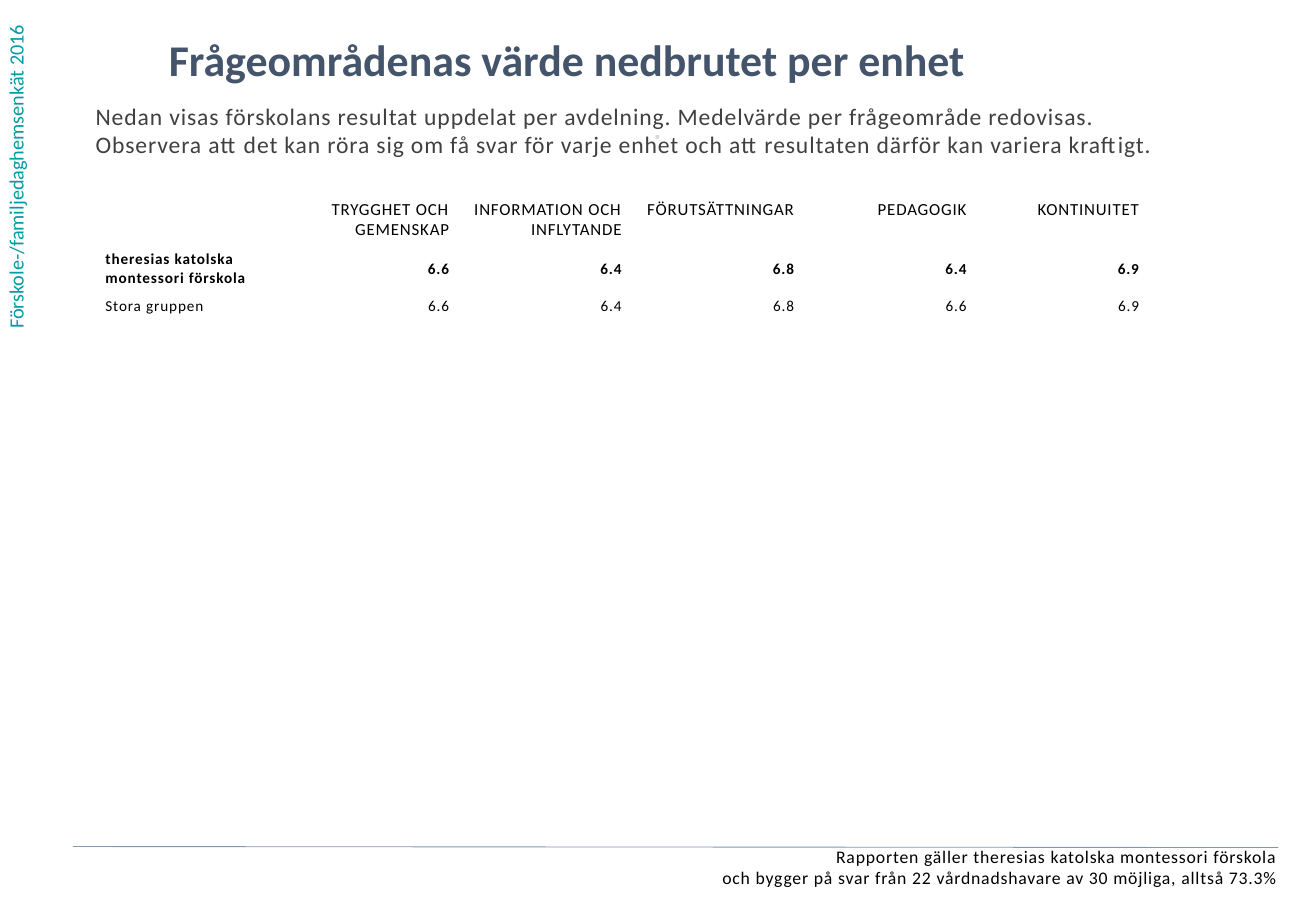
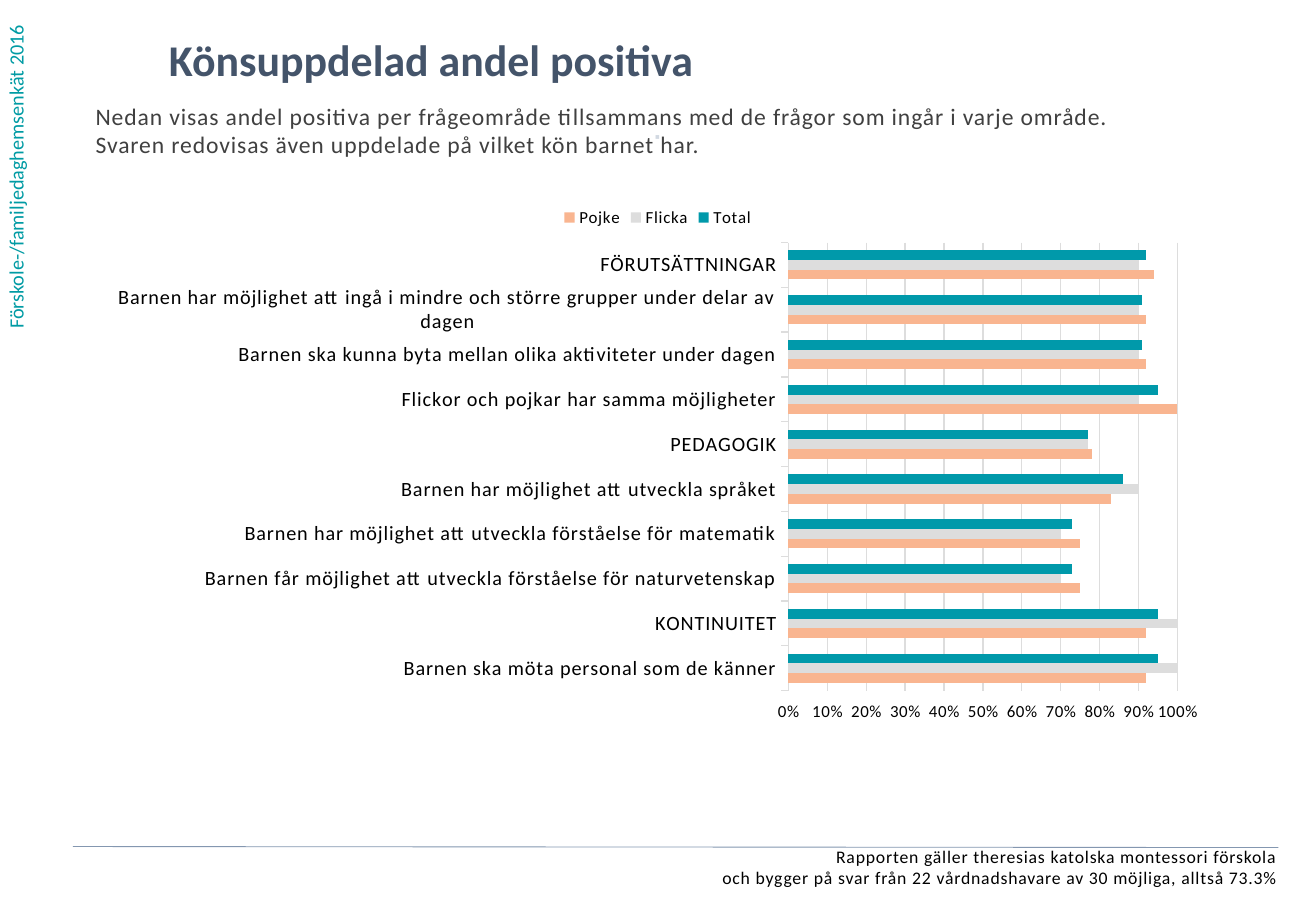
import dataclasses

import pptx
import pptx.chart.data
import pptx.dml.color
import pptx.enum.chart
import pptx.enum.shapes
import pptx.enum.text
import pptx.oxml.ns
import pptx.util

Pt = pptx.util.Pt
RGB = pptx.dml.color.RGBColor.from_string
qn = pptx.oxml.ns.qn
Align = pptx.enum.text.PP_ALIGN
Anchor = pptx.enum.text.MSO_ANCHOR


@dataclasses.dataclass(frozen=True)
class Theme:
    font: str = "Calibri"
    title: str = "44546A"
    body: str = "404040"
    ink: str = "000000"
    teal: str = "009BA4"
    dot: str = "D2D9E2"
    rule: str = "8497B0"
    grid: str = "DDDDDD"
    white: str = "FFFFFF"
    head: float = 26
    lead: float = 14
    label: float = 12
    foot: float = 10.5
    small: float = 10
    cell: float = 9
    track: str = "50"


T = Theme()
WIDE, TALL = 779.76, 540
LEFT, TOP = 56.7, 115.2

SIDE = "Förskole-/familjedaghemsenkät 2016"
FOOT = ("Rapporten gäller theresias katolska montessori förskola\n"
        "och bygger på svar från 22 vårdnadshavare av 30 möjliga, alltså 73.3%")

UNITS = {
    "title": "Frågeområdenas värde nedbrutet per enhet",
    "lead": "Nedan visas förskolans resultat uppdelat per avdelning. "
            "Medelvärde per frågeområde redovisas.\n"
            "Observera att det kan röra sig om få svar för varje enhet "
            "och att resultaten därför kan variera kraftigt.",
    "rows": [
        ("", "TRYGGHET OCH GEMENSKAP", "INFORMATION OCH INFLYTANDE",
         "FÖRUTSÄTTNINGAR", "PEDAGOGIK", "KONTINUITET", ""),
        ("theresias katolska montessori förskola",
         "6.6", "6.4", "6.8", "6.4", "6.9", ""),
        ("Stora gruppen", "6.6", "6.4", "6.8", "6.6", "6.9", ""),
    ],
    "heights": (30.2, 28, 17),
}

GENDER = {
    "title": "Könsuppdelad andel positiva",
    "lead": "Nedan visas andel positiva per frågeområde tillsammans med de "
            "frågor som ingår i varje område.\n"
            "Svaren redovisas även uppdelade på vilket kön barnet har.",
    "names": ("Total", "Flicka", "Pojke"),
    "fills": ("0099AA", "DDDDDD", "F9B590"),
    "rows": [
        ("FÖRUTSÄTTNINGAR", 0.92, 0.9, 0.94),
        ("Barnen har möjlighet att ingå i mindre och större grupper under "
         "delar av dagen", 0.91, 0.9, 0.92),
        ("Barnen ska kunna byta mellan olika aktiviteter under dagen",
         0.91, 0.9, 0.92),
        ("Flickor och pojkar har samma möjligheter", 0.95, 0.9, 1),
        ("PEDAGOGIK", 0.77, 0.77, 0.78),
        ("Barnen har möjlighet att utveckla språket", 0.86, 0.9, 0.83),
        ("Barnen har möjlighet att utveckla förståelse för matematik",
         0.73, 0.7, 0.75),
        ("Barnen får möjlighet att utveckla förståelse för naturvetenskap",
         0.73, 0.7, 0.75),
        ("KONTINUITET", 0.95, 1, 0.92),
        ("Barnen ska möta personal som de känner", 0.95, 1, 0.92),
    ],
}


def style(font, size, color, bold=False):
    font.name, font.size, font.bold = T.font, Pt(size), bold
    font.color.rgb = RGB(color)


def write(frame, text, size, color, bold=False, align=Align.LEFT, track=True):
    """Fill a frame with one paragraph; a newline becomes a line break."""
    para = frame.paragraphs[0]
    para.text, para.alignment = text, align
    style(para.font, size, color, bold)
    if track:
        para._p.pPr.find(qn("a:defRPr")).set("spc", T.track)


def fit(frame):
    frame.word_wrap = True
    frame.auto_size = pptx.enum.text.MSO_AUTO_SIZE.NONE
    frame.vertical_anchor = Anchor.TOP
    frame.margin_left = frame.margin_right = 0
    frame.margin_top = frame.margin_bottom = 0


def add_text(slide, box, *args, **opts):
    frame = slide.shapes.add_textbox(*map(Pt, box)).text_frame
    fit(frame)
    write(frame, *args, **opts)
    return frame


def add_page(deck, page):
    """Add a slide with the title, lead and shared marks."""
    slide = deck.slides.add_slide(deck.slide_layouts[5])
    side = add_text(slide, (2, 0, 15, 195), SIDE, T.label, T.teal, track=False)
    side._txBody.bodyPr.set("vert", "vert270")

    title = slide.shapes.title
    title.left, title.top, title.width, title.height = map(
        Pt, (100, 19.5, 600, 41))
    fit(title.text_frame)
    write(title.text_frame, page["title"], T.head, T.title, True, track=False)

    add_text(slide, (LEFT, 60.2, 681, 40), page["lead"], T.lead, T.body)
    add_text(slide, (8.4, 501.1, 748.8, 31), FOOT, T.foot, T.ink,
             align=Align.RIGHT)
    add_text(slide, (278.5, 73.5, 222, 28), "⋅", T.label, T.dot, True,
             Align.CENTER)

    rule = slide.shapes.add_connector(
        pptx.enum.shapes.MSO_CONNECTOR.STRAIGHT,
        *map(Pt, (43.2, 501.8, 757.4, 502.4)))
    rule.line.color.rgb, rule.line.width = RGB(T.rule), Pt(0.5)
    rule._element.spPr.append(pptx.oxml.parse_xml(
        f'<a:effectLst {pptx.oxml.ns.nsdecls("a")}/>'))
    return slide


def add_units(slide, page):
    rows, tall = page["rows"], page["heights"]
    wide = [113] + [102.2] * (len(rows[0]) - 2)
    wide.append(WIDE - LEFT - sum(wide))
    table = slide.shapes.add_table(
        len(rows), len(wide),
        *map(Pt, (LEFT, TOP, sum(wide), sum(tall)))).table
    table.first_row = table.horz_banding = False
    for col, width in zip(table.columns, wide):
        col.width = Pt(width)
    for r, texts in enumerate(rows):
        table.rows[r].height = Pt(tall[r])
        for c, text in enumerate(texts):
            cell = table.cell(r, c)
            cell.fill.solid()
            cell.fill.fore_color.rgb = RGB(T.white)
            cell.margin_left = cell.margin_right = Pt(5.8)
            cell.margin_top = cell.margin_bottom = Pt(2.9)
            cell.vertical_anchor = Anchor.MIDDLE if r else Anchor.TOP
            write(cell.text_frame, text, T.cell if r else T.small, T.ink,
                  r == 1, Align.RIGHT if c else Align.LEFT)
            if not text:
                end = cell.text_frame.paragraphs[0]._p.get_or_add_endParaRPr()
                end.set("sz", str(int(T.cell * 100)))


def add_bars(slide, page):
    cats, *series = zip(*page["rows"])
    data = pptx.chart.data.CategoryChartData(number_format="0%")
    data.categories = cats
    for name, vals in zip(page["names"], series):
        data.add_series(name, vals)
    kinds = pptx.enum.chart
    chart = slide.shapes.add_chart(
        kinds.XL_CHART_TYPE.BAR_CLUSTERED, *map(Pt, (LEFT, TOP, 666, 319)),
        data).chart
    chart.has_title = False
    style(chart.font, T.small, T.ink)

    plot = chart.plots[0]
    plot.gap_width, plot.overlap, plot.vary_by_categories = 162, 0, False
    for bar, color in zip(plot.series, page["fills"]):
        bar.format.fill.solid()
        bar.format.fill.fore_color.rgb = RGB(color)

    cat, val = chart.category_axis, chart.value_axis
    cat.reverse_order = True
    style(cat.tick_labels.font, T.label, T.ink)
    style(val.tick_labels.font, T.small, T.ink)
    val.minimum_scale, val.maximum_scale, val.major_unit = 0, 1, 0.1
    val.tick_label_position = kinds.XL_TICK_LABEL_POSITION.HIGH
    val.tick_labels.number_format = "0%;0%"
    val.tick_labels.number_format_is_linked = False
    val.has_major_gridlines = True
    val.format.line.fill.background()
    for line in cat.format.line, val.major_gridlines.format.line:
        line.color.rgb, line.width = RGB(T.grid), Pt(0.75)

    chart.has_legend = True
    chart.legend.position = kinds.XL_LEGEND_POSITION.TOP
    chart.legend.include_in_layout = False
    style(chart.legend.font, T.small, T.ink)
    for props in chart._chartSpace.iter(qn("a:defRPr")):
        props.set("spc", T.track)


def main():
    deck = pptx.Presentation()
    deck.slide_width, deck.slide_height = Pt(WIDE), Pt(TALL)
    for page, draw in (UNITS, add_units), (GENDER, add_bars):
        draw(add_page(deck, page), page)
    deck.save("out.pptx")


if __name__ == "__main__":
    main()
